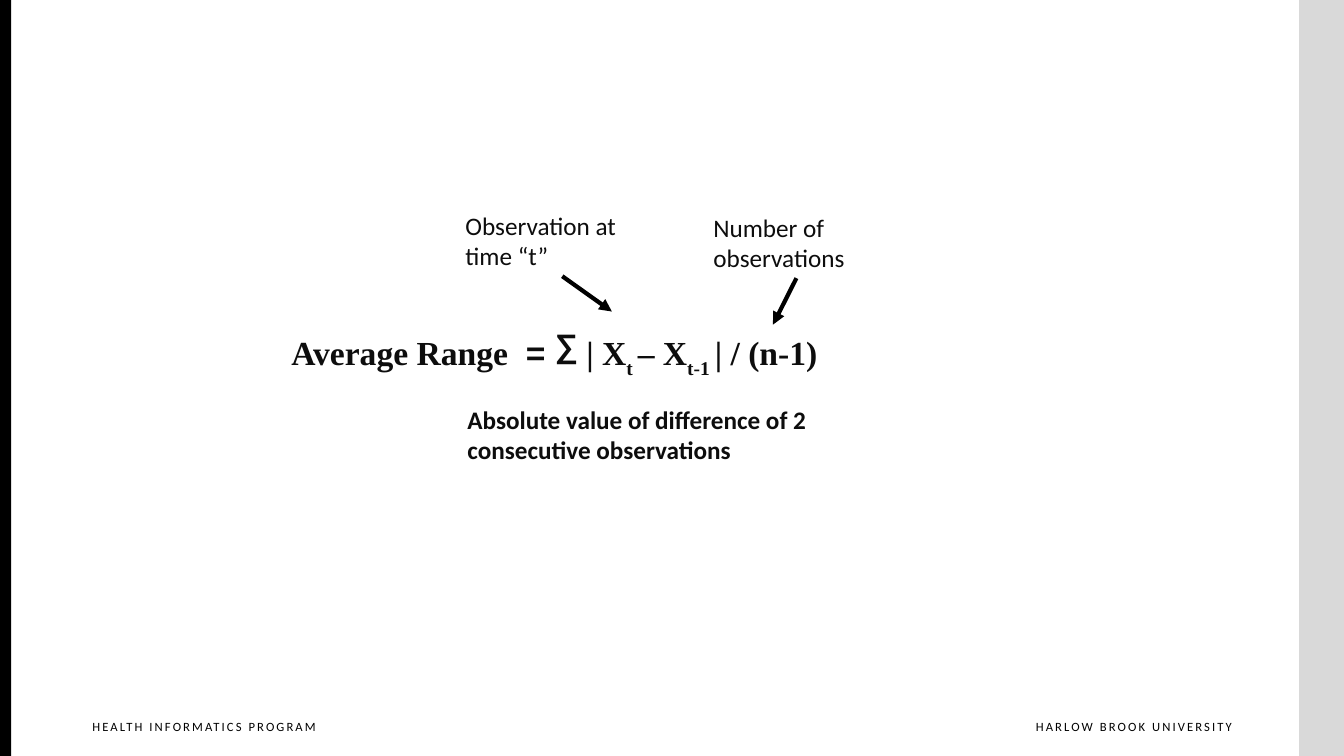
"""Builds a slide that explains the average range formula."""
import pptx
import pptx.dml.color
import pptx.enum.shapes
import pptx.enum.text
import pptx.oxml.ns
import pptx.util
from lxml import etree

Cm = pptx.util.Cm
Pt = pptx.util.Pt
RGBColor = pptx.dml.color.RGBColor
PP_ALIGN = pptx.enum.text.PP_ALIGN
qn = pptx.oxml.ns.qn

BLACK = RGBColor(0x00, 0x00, 0x00)
WHITE = RGBColor(0xFF, 0xFF, 0xFF)
GRAY = RGBColor(0xD9, 0xD9, 0xD9)
INK = RGBColor(0x0D, 0x0D, 0x0D)


def add_run(p, text, size=18, font="Calibri", color=INK, bold=False, spacing=0, baseline=0):
    """Append a formatted run to a paragraph."""
    r = p.add_run()
    r.text = text
    r.font.size = Pt(size)
    r.font.name = font
    r.font.color.rgb = color
    r.font.bold = bold
    rPr = r.font._element
    if spacing:
        rPr.set("spc", str(round(spacing * 100)))
    if baseline:
        rPr.set("baseline", str(baseline * 1000))


prs = pptx.Presentation()
prs.slide_width = Cm(33.87)
prs.slide_height = Cm(19.05)
s = prs.slides.add_slide(prs.slide_layouts[6])

for left, width, color in [(32.74, 1.13, GRAY), (0, 0.28, BLACK)]:
    bar = s.shapes.add_shape(pptx.enum.shapes.MSO_SHAPE.RECTANGLE,
                             Cm(left), 0, Cm(width), prs.slide_height)
    bar.shadow.inherit = False
    bar.fill.solid()
    bar.fill.fore_color.rgb = color
    bar.line.fill.background()

footers = [
    ("HARLOW BROOK UNIVERSITY", 25.07, 5.97, PP_ALIGN.RIGHT),
    ("HEALTH INFORMATICS PROGRAM", 2.08, 6.45, PP_ALIGN.LEFT),
]
for text, left, width, align in footers:
    tf = s.shapes.add_textbox(Cm(left), Cm(17.98), Cm(width), Cm(0.84)).text_frame
    tf.word_wrap = True
    tf.margin_right = 0
    p = tf.paragraphs[0]
    p.alignment = align
    add_run(p, text, size=9, color=BLACK, spacing=1.5)

table = s.shapes.add_table(1, 1, Cm(7.09), Cm(7.8), Cm(15.44), Cm(1.7)).table
table.first_row = False
table.horz_banding = False
cell = table.cell(0, 0)
cell.fill.solid()
cell.fill.fore_color.rgb = WHITE
formula = [
    ("Average Range ", 24, "Times New Roman", 0),
    (" = ", 24, "Arial", 0),
    ("∑", 40, "Arial", 14),
    (" | X", 24, "Times New Roman", 0),
    ("t ", 24, "Times New Roman", -30),
    ("– X", 24, "Times New Roman", 0),
    ("t-1 ", 24, "Times New Roman", -30),
    ("| / (n-1)", 24, "Times New Roman", 0),
]
for text, size, font, baseline in formula:
    add_run(cell.text_frame.paragraphs[0], text, size=size, font=font, bold=True, baseline=baseline)

labels = [
    ("Absolute value of difference of 2 consecutive observations", 11.53, 10.06, 9.73, True),
    ("Number of observations", 17.73, 5.23, 4.65, False),
    ("Observation at time “t”", 11.48, 5.18, 5.38, False),
]
for text, left, top, width, bold in labels:
    box = s.shapes.add_textbox(Cm(left), Cm(top), Cm(width), Cm(1.8))
    box.fill.solid()
    box.fill.fore_color.rgb = WHITE
    tf = box.text_frame
    tf.word_wrap = True
    tf.auto_size = pptx.enum.text.MSO_AUTO_SIZE.SHAPE_TO_FIT_TEXT
    add_run(tf.paragraphs[0], text, bold=bold)

for ends in [(14.17, 6.96, 15.42, 7.85), (20.07, 7.01, 19.48, 8.18)]:
    arrow = s.shapes.add_connector(pptx.enum.shapes.MSO_CONNECTOR.STRAIGHT, *map(Cm, ends))
    arrow.line.color.rgb = BLACK
    arrow.line.width = Pt(3)
    spPr = arrow._element.spPr
    etree.SubElement(spPr.find(qn("a:ln")), qn("a:tailEnd"), type="triangle")
    etree.SubElement(spPr, qn("a:effectLst"))

prs.save("out.pptx")
